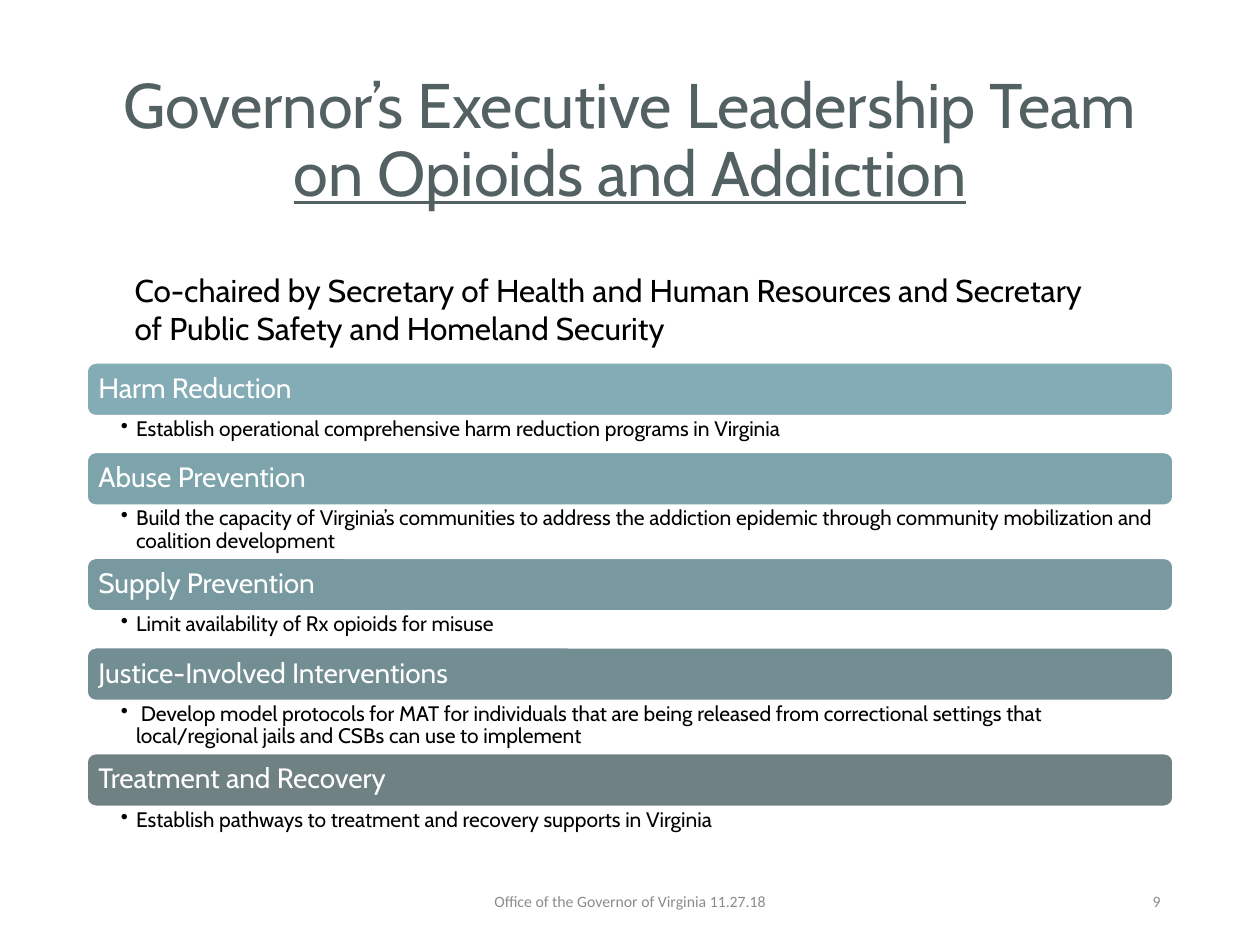
from dataclasses import dataclass

from lxml import etree
from pptx import Presentation
from pptx.dml.color import RGBColor
from pptx.enum.shapes import MSO_SHAPE
from pptx.enum.text import MSO_ANCHOR, PP_ALIGN
from pptx.oxml.ns import qn
from pptx.util import Inches, Pt

ROUNDED = MSO_SHAPE.ROUNDED_RECTANGLE
TOP, MIDDLE = MSO_ANCHOR.TOP, MSO_ANCHOR.MIDDLE
LEFT, CENTER, RIGHT = PP_ALIGN.LEFT, PP_ALIGN.CENTER, PP_ALIGN.RIGHT

MARGIN = 0.69
CONTENT_WIDTH = 8.62
BAND_HEIGHT = 0.42
FIRST_BAND_TOP = 2.88
DETAIL_HEIGHTS = {1: 0.29, 2: 0.42}
BULLET_INDENT = 0.12


@dataclass(frozen=True)
class TextStyle:
    size: float
    color: str
    font: str = "Cabin"
    align: int = LEFT
    anchor: int = TOP
    spacing: float = 1.0
    insets: tuple[float, float, float, float] = (0.1, 0.05, 0.1, 0.05)


@dataclass(frozen=True)
class Priority:
    heading: str
    detail: str
    color: str
    detail_lines: int = 1


TITLE = TextStyle(36, "536162", align=CENTER, anchor=MIDDLE, spacing=0.9)
CHAIRS = TextStyle(18, "000000")
HEADING = TextStyle(16, "FFFFFF", anchor=MIDDLE, spacing=0.9, insets=(0.07,) * 4)
DETAIL = TextStyle(12, "000000", spacing=0.9, insets=(0.27, 0.02, 0.12, 0.02))
FOOTER = TextStyle(9, "8C8C8C", "Calibri", CENTER, MIDDLE)
PAGE_NUMBER = TextStyle(9, "8C8C8C", "Calibri", RIGHT, MIDDLE)

PRIORITIES = [
    Priority(
        "Harm Reduction",
        "Establish operational comprehensive harm reduction programs in Virginia",
        "84ACB6",
    ),
    Priority(
        "Abuse Prevention",
        "Build the capacity of Virginia’s communities to address the addiction "
        "epidemic through community mobilization and coalition development",
        "7DA3AB",
        2,
    ),
    Priority("Supply Prevention", "Limit availability of Rx opioids for misuse", "77999F"),
    Priority(
        "Justice-Involved Interventions",
        " Develop model protocols for MAT for individuals that are being released from "
        "correctional settings that local/regional jails and CSBs can use to implement",
        "728E92",
        2,
    ),
    Priority(
        "Treatment and Recovery",
        "Establish pathways to treatment and recovery supports in Virginia",
        "6F8183",
    ),
]


def rgb(value: str) -> RGBColor:
    return RGBColor.from_string(value)


def set_attributes(target, values: dict) -> None:
    for name, value in values.items():
        setattr(target, name, value)


def add_run(paragraph, text: str, style: TextStyle, underline: bool = False) -> None:
    run = paragraph.add_run()
    run.text = text
    set_attributes(run.font, {"name": style.font, "size": Pt(style.size)})
    run.font.color.rgb = rgb(style.color)
    if underline:
        run.font.underline = True


def write(shape, text: str, style: TextStyle):
    left, top, right, bottom = (Inches(inset) for inset in style.insets)
    frame = shape.text_frame
    set_attributes(frame, {
        "word_wrap": True,
        "vertical_anchor": style.anchor,
        "margin_left": left,
        "margin_top": top,
        "margin_right": right,
        "margin_bottom": bottom,
    })
    paragraph = frame.paragraphs[0]
    set_attributes(paragraph, {"alignment": style.align, "line_spacing": style.spacing})
    add_run(paragraph, text, style)
    return paragraph


def add_text(slide, left: float, top: float, width: float, height: float,
             text: str, style: TextStyle):
    box = slide.shapes.add_textbox(Inches(left), Inches(top), Inches(width), Inches(height))
    return write(box, text, style)


def add_bullet(paragraph) -> None:
    properties = paragraph._p.get_or_add_pPr()
    properties.set("marL", str(Inches(BULLET_INDENT)))
    properties.set("indent", str(-Inches(BULLET_INDENT)))
    etree.SubElement(properties, qn("a:buChar")).set("char", "•")


def add_priority(slide, priority: Priority, top: float) -> float:
    band = slide.shapes.add_shape(
        ROUNDED, Inches(MARGIN), Inches(top), Inches(CONTENT_WIDTH), Inches(BAND_HEIGHT)
    )
    band.shadow.inherit = False
    band.fill.solid()
    band.fill.fore_color.rgb = rgb(priority.color)
    band.line.color.rgb = rgb("FFFFFF")
    band.line.width = Pt(1)
    write(band, priority.heading, HEADING)

    detail_top = top + BAND_HEIGHT
    detail_height = DETAIL_HEIGHTS[priority.detail_lines]
    add_bullet(add_text(slide, MARGIN, detail_top, CONTENT_WIDTH, detail_height,
                        priority.detail, DETAIL))
    return detail_top + detail_height


def main() -> None:
    deck = Presentation()
    set_attributes(deck, {"slide_width": Inches(10), "slide_height": Inches(7.5)})
    slide = deck.slides.add_slide(deck.slide_layouts[6])

    title = add_text(slide, MARGIN, 0.4, CONTENT_WIDTH, 1.45,
                     "Governor’s Executive Leadership Team ", TITLE)
    add_run(title, "on Opioids and Addiction", TITLE, underline=True)
    add_text(slide, 0.97, 2.1, 7.83, 0.71,
             "Co-chaired by Secretary of Health and Human Resources and Secretary "
             "of Public Safety and Homeland Security", CHAIRS)

    top = FIRST_BAND_TOP
    for priority in PRIORITIES:
        top = add_priority(slide, priority, top)

    add_text(slide, 3.31, 6.95, 3.38, 0.4,
             "Office of the Governor of Virginia 11.27.18", FOOTER)
    add_text(slide, 7.06, 6.95, 2.25, 0.4, "9", PAGE_NUMBER)
    deck.save("out.pptx")


if __name__ == "__main__":
    main()
